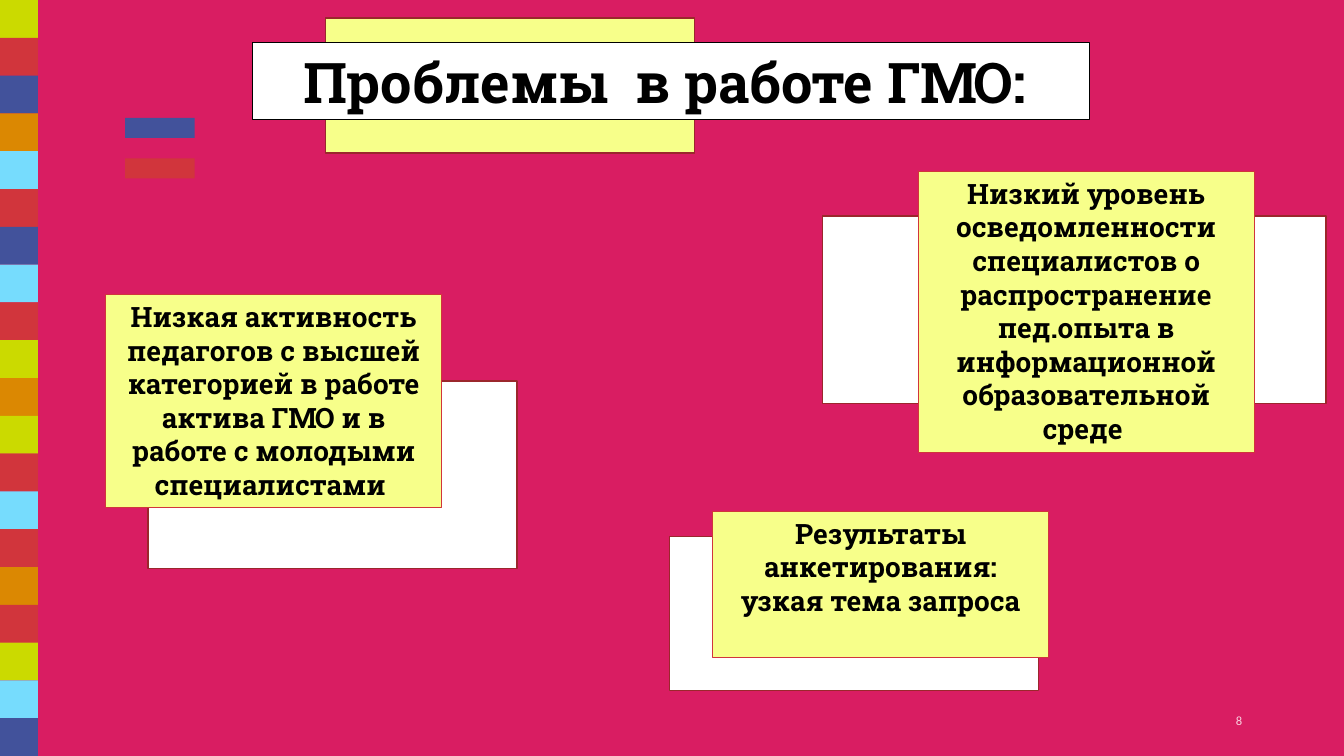
from pptx import Presentation
from pptx.dml.color import RGBColor
from pptx.enum.shapes import MSO_SHAPE
from pptx.enum.text import MSO_ANCHOR, PP_ALIGN
from pptx.util import Inches, Pt

RECTANGLE = MSO_SHAPE.RECTANGLE
TOP, MIDDLE = MSO_ANCHOR.TOP, MSO_ANCHOR.MIDDLE
CENTER, RIGHT = PP_ALIGN.CENTER, PP_ALIGN.RIGHT

WIDTH, HEIGHT = 13.33, 7.5
ROWS = 20
CELL = HEIGHT / ROWS  # side of one square grid cell, in inches

COLORS = {
    "background": "D91D62", "lime": "CBDA00", "red": "D1353C",
    "blue": "42529B", "orange": "DB8802", "sky": "76DCFD",
    "yellow": "F7FF8A", "white": "FFFFFF", "black": "000000",
    "maroon": "9B272C", "pale": "F9D0DF",
}

STRIPE = [
    "lime", "red", "blue", "orange", "sky", "red", "blue", "sky", "red", "lime",
    "orange", "lime", "red", "sky", "red", "orange", "red", "lime", "sky", "blue",
]

# Places are column, row, columns wide, rows high
BACKDROPS = [
    ((8.61, 0.48, 9.76, 3.57), "yellow"),
    ((17.71, 14.19, 9.76, 4.08), "white"),
    ((21.76, 5.71, 13.31, 4.96), "white"),
    ((3.92, 10.08, 9.76, 4.96), "white"),
]

PROBLEMS = [
    ((2.8, 7.79, 8.88, 5.65),
     ["Низкая активность педагогов с высшей категорией в работе "
      "актива ГМО и в работе с молодыми специалистами "]),
    ((24.29, 4.53, 8.88, 7.44),
     ["Низкий уровень осведомленности специалистов о распространение "
      "пед.опыта в информационной образовательной среде "]),
    ((18.85, 13.52, 8.88, 3.87),
     ["Результаты анкетирования:", "узкая тема запроса"]),
]


def color(name):
    return RGBColor.from_string(COLORS[name])


def grid(place):
    return [Inches(cells * CELL) for cells in place]


def add_box(page, place, fill, line=None, weight=1):
    box = page.shapes.add_shape(RECTANGLE, *grid(place))
    box.shadow.inherit = False
    box.fill.solid()
    box.fill.fore_color.rgb = color(fill)
    if line:
        box.line.color.rgb = color(line)
        box.line.width = Pt(weight)
    else:
        box.line.fill.background()
    return box


def write(box, lines, size=20, font="Roboto Slab", ink="black", bold=True,
          align=CENTER, anchor=TOP, wrap=True):
    frame = box.text_frame
    frame.word_wrap = wrap
    frame.vertical_anchor = anchor
    for index, text in enumerate(lines):
        para = frame.add_paragraph() if index else frame.paragraphs[0]
        para.alignment = align
        span = para.add_run()
        span.text = text
        span.font.name = font
        span.font.size = Pt(size)
        span.font.bold = bold
        span.font.color.rgb = color(ink)


def main():
    deck = Presentation()
    deck.slide_width, deck.slide_height = Inches(WIDTH), Inches(HEIGHT)
    page = deck.slides.add_slide(deck.slide_layouts[6])
    page.background.fill.solid()
    page.background.fill.fore_color.rgb = color("background")

    # Coloured stripe along the left edge
    for row, fill in enumerate(STRIPE):
        add_box(page, (0, row, 1, 1), fill)

    # Two small dashes
    for row, fill in ((3.12, "blue"), (4.19, "red")):
        add_box(page, (3.31, row, 1.84, 0.53), fill)

    # Panels behind the title and the problems
    for place, fill in BACKDROPS:
        add_box(page, place, fill, line="maroon")

    # Title
    title = add_box(page, (6.69, 1.12, 22.13, 2.05), "white", "black", 0.75)
    write(title, ["Проблемы  в работе ГМО: "], size=40, wrap=False)

    # Problems
    for place, lines in PROBLEMS:
        write(add_box(page, place, "yellow", "red", 0.75), lines)

    # Page number
    number = page.shapes.add_textbox(*grid((25.12, 18.53, 8, 1.07)))
    write(number, ["8"], size=9, font="Calibri", ink="pale", bold=False,
          align=RIGHT, anchor=MIDDLE)

    deck.save("out.pptx")


if __name__ == "__main__":
    main()
